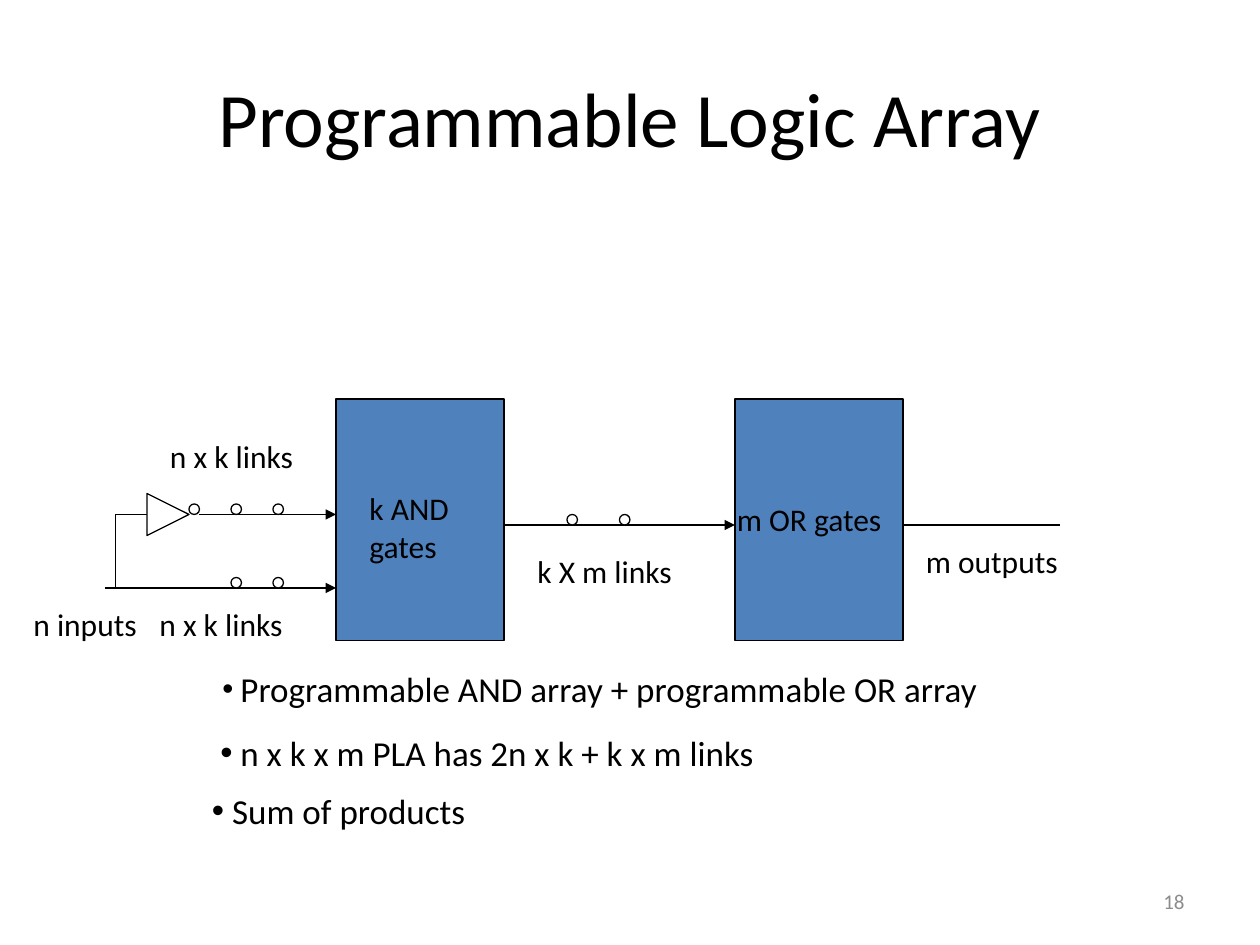
from lxml.etree import SubElement
from pptx import Presentation
from pptx.dml.color import RGBColor as Color
from pptx.enum.shapes import MSO_CONNECTOR as Conn, MSO_SHAPE as Kind
from pptx.enum.text import MSO_ANCHOR as Anchor, PP_ALIGN as Align
from pptx.oxml.ns import qn
from pptx.util import Inches, Pt

COLS, ROWS = 120, 90
BLACK, WHITE, BLUE, GRAY = "000000", "FFFFFF", "4F81BD", "8C8C8C"

deck = Presentation()
deck.slide_width, deck.slide_height = Inches(10), Inches(7.5)
slide = deck.slides.add_slide(deck.slide_layouts[6])
parts = slide.shapes
col, row = deck.slide_width / COLS, deck.slide_height / ROWS


def paint(code):
    return Color.from_string(code)


def place(x, y, w, h):
    return [round(v) for v in (x * col, y * row, w * col, h * row)]


def edge(item):
    item.line.color.rgb = paint(BLACK)
    item.line.width = Pt(0.75)


def shape(kind, box, fill=WHITE):
    item = parts.add_shape(kind, *place(*box))
    item.shadow.inherit = False
    item.fill.solid()
    item.fill.fore_color.rgb = paint(fill)
    edge(item)
    return item


def wire(start, end, arrow=False):
    item = parts.add_connector(Conn.STRAIGHT, *place(*start, *end))
    edge(item)
    props = item.line._get_or_add_ln()
    if arrow:
        SubElement(props, qn("a:tailEnd"), type="triangle")
    SubElement(props.getparent(), qn("a:effectLst"))


def text(box, lines, size=18, tone=BLACK, align=Align.LEFT,
         anchor=Anchor.TOP, wrap=False, dot=False):
    frame = parts.add_textbox(*place(*box)).text_frame
    frame.word_wrap = wrap
    frame.vertical_anchor = anchor
    for i, line in enumerate(lines):
        para = frame.paragraphs[0] if i == 0 else frame.add_paragraph()
        para.alignment = align
        if dot:
            props = para._p.get_or_add_pPr()
            SubElement(props, qn("a:buFont"), typeface="Arial")
            SubElement(props, qn("a:buChar"), char="•")
        for words, points in line:
            run = para.add_run()
            run.text = words
            run.font.name = "Calibri"
            run.font.size = Pt(points or size)
            run.font.color.rgb = paint(tone)


def label(x, y, w, *lines):
    text((x, y, w, 1.2 + 3.6 * len(lines)), [[(line, None)] for line in lines])


def dots(y, *spots):
    for x in spots:
        shape(Kind.OVAL, (x, y, 1, 1))


def head(box):
    text(box, [[("Programmable Logic Array", 44)]], align=Align.CENTER,
         anchor=Anchor.MIDDLE, wrap=True)


def page(box):
    text(box, [[("18", 12)]], tone=GRAY, align=Align.RIGHT,
         anchor=Anchor.MIDDLE, wrap=True)


def inputs(box):
    x, y, w, h = box
    end, top, low = x + w, y + 8, y + 15
    wire((x + 8, low), (end, low), True)
    wire((x + 17, top), (end, top), True)
    wire((x + 9, top), (x + 9, low))
    wire((x + 9, top), (x + 12, top))
    shape(Kind.ISOSCELES_TRIANGLE, (x + 12, top - 2, 4, 4)).rotation = 90
    dots(top - 1, x + 16, x + 20, x + 24)
    dots(low - 1, x + 20, x + 24)
    label(x + 13, y, 16.7, "n x k links")
    label(x, y + 16, 13.1, "n inputs")
    label(x + 12, y + 16, 16.7, "n x k links")


def gate(box, left, top, wide, *lines):
    shape(Kind.RECTANGLE, box, BLUE)
    label(box[0] + left, box[1] + top, wide, *lines)


def links(box):
    x, y, w, h = box
    wire((x, y + 1), (x + w, y + 1), True)
    dots(y, x + 6, x + 11)
    label(x + 2, y + 3, 16.9, "k X m links")


def outs(box):
    x, y, w, h = box
    wire((x, y), (x + w, y))
    label(x + 1, y + 1, 16.8, "m outputs")


def notes(box):
    x, y, w, h = box
    rows = [
        (1, 0, w - 1, [(" ", 18), ("Programmable AND array + programmable OR array", 20)]),
        (0.8, 6.1, 62.6, [(" n x k x m PLA has 2n x k + k x m links", 20)]),
        (0, 11.6, 29.9, [(" Sum of products", 20)]),
    ]
    for dx, dy, wide, runs in rows:
        text((x + dx, y + dy, wide, 5.2), [runs], dot=True)


def main():
    page((86, 83.4, 28, 4.8))
    head((6, 3.6, 108, 15))
    gate((32, 38, 16, 23), 2, 8, 11.6, "k AND", "gates")
    gate((70, 38, 16, 23), -1, 9, 18, "m OR gates")
    inputs((2, 41, 30, 21))
    links((48, 49, 22, 8))
    outs((86, 50, 15, 6))
    notes((19, 63, 83.9, 17))
    deck.save("out.pptx")


if __name__ == "__main__":
    main()
